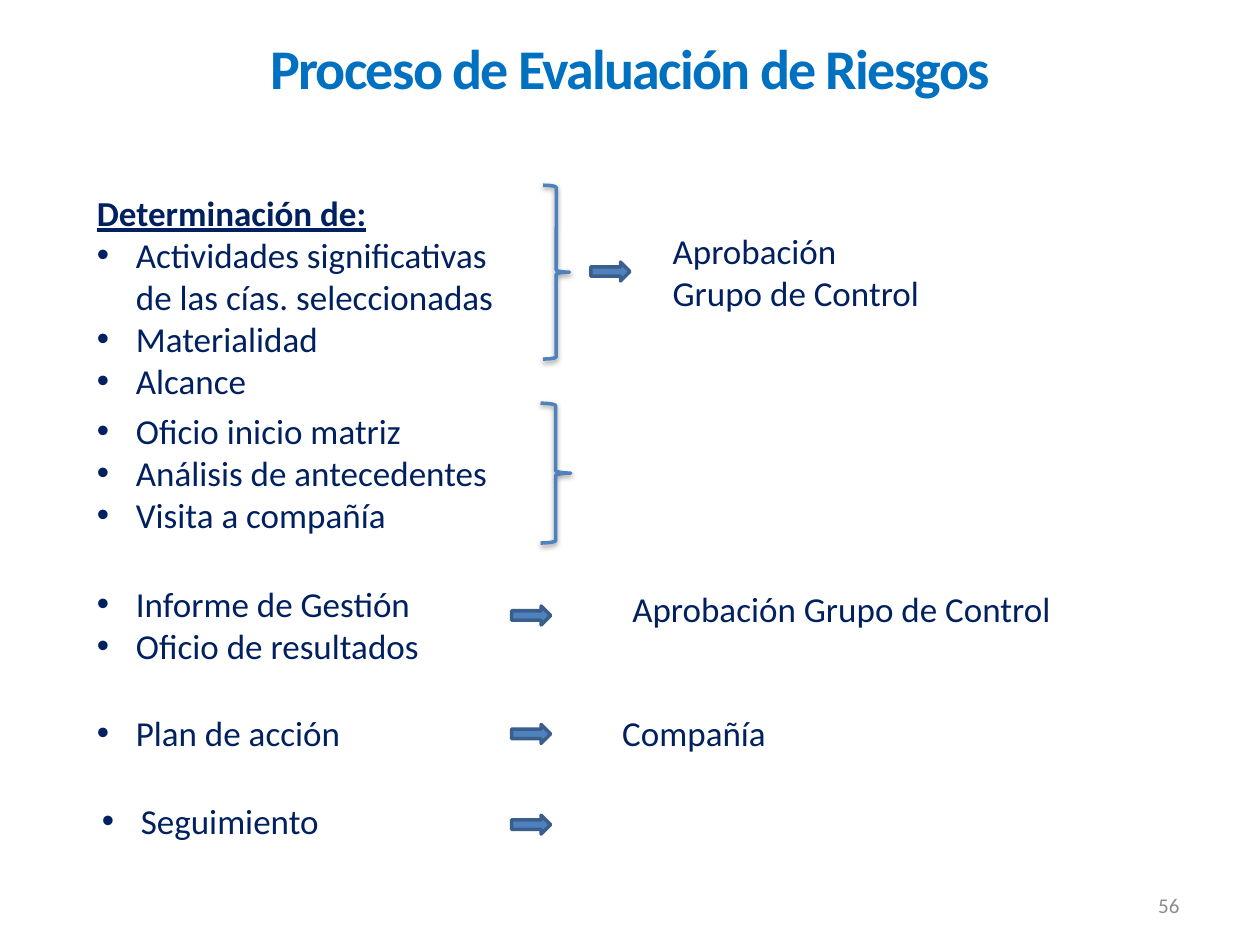
from dataclasses import dataclass

from lxml import etree
from pptx import Presentation
from pptx.dml.color import RGBColor
from pptx.enum.shapes import MSO_SHAPE
from pptx.enum.text import MSO_ANCHOR, MSO_AUTO_SIZE, PP_ALIGN
from pptx.oxml.ns import qn
from pptx.util import Inches, Pt

BRACE, ARROW = MSO_SHAPE.RIGHT_BRACE, MSO_SHAPE.RIGHT_ARROW
LEFT, CENTER, RIGHT = PP_ALIGN.LEFT, PP_ALIGN.CENTER, PP_ALIGN.RIGHT
TOP, MIDDLE = MSO_ANCHOR.TOP, MSO_ANCHOR.MIDDLE
FIT_SHAPE, FIXED = MSO_AUTO_SIZE.SHAPE_TO_FIT_TEXT, MSO_AUTO_SIZE.NONE


@dataclass(frozen=True)
class Theme:
    font: str = "Calibri"
    title_size: int = 32
    body_size: int = 20
    number_size: int = 12
    title: str = "0070C0"
    body: str = "002060"
    number: str = "8C8C8C"
    accent: str = "4F81BD"
    arrow_line: str = "3A5F8C"
    shadow: str = "000000"
    line_width: int = 2
    bullet_indent: float = 0.31


class SlideBuilder:
    def __init__(self, slide, theme):
        self.slide = slide
        self.theme = theme

    def add_run(self, paragraph, text, size, color, bold=False, underline=False):
        run = paragraph.add_run()
        run.text = text
        font = run.font
        font.name, font.size = self.theme.font, Pt(size)
        font.bold, font.underline = bold, underline
        font.color.rgb = RGBColor.from_string(color)
        return run

    def add_title(self, text, box):
        title = self.slide.shapes.title
        title.left, title.top, title.width, title.height = map(Inches, box)
        frame = title.text_frame
        frame.vertical_anchor, frame.auto_size = MIDDLE, FIXED
        paragraph = frame.paragraphs[0]
        paragraph.alignment = CENTER
        run = self.add_run(paragraph, text, self.theme.title_size, self.theme.title, bold=True)
        run.font._element.set("spc", "-100")

    def add_frame(self, box, anchor=TOP, auto_size=FIT_SHAPE):
        frame = self.slide.shapes.add_textbox(*map(Inches, box)).text_frame
        frame.word_wrap = True
        frame.vertical_anchor, frame.auto_size = anchor, auto_size
        return frame

    def add_label(self, text, box):
        paragraph = self.add_frame(box).paragraphs[0]
        self.add_run(paragraph, text, self.theme.body_size, self.theme.body)

    def add_bullets(self, items, box, heading=None):
        frame = self.add_frame(box)
        lines = ([heading] if heading else []) + items
        for index, text in enumerate(lines):
            paragraph = frame.add_paragraph() if index else frame.paragraphs[0]
            is_heading = bool(heading) and index == 0
            if not is_heading:
                self.set_bullet(paragraph)
            self.add_run(paragraph, text, self.theme.body_size, self.theme.body,
                         bold=is_heading, underline=is_heading)

    def set_bullet(self, paragraph):
        properties = paragraph._p.get_or_add_pPr()
        indent = Inches(self.theme.bullet_indent)
        properties.set("marL", str(indent))
        properties.set("indent", str(-indent))
        etree.SubElement(properties, qn("a:buFont"), typeface="Arial")
        etree.SubElement(properties, qn("a:buChar"), char="•")

    def add_outlined(self, kind, box, line_color):
        shape = self.slide.shapes.add_shape(kind, *map(Inches, box))
        shape.shadow.inherit = False
        shape.line.color.rgb = RGBColor.from_string(line_color)
        shape.line.width = Pt(self.theme.line_width)
        return shape

    def add_brace(self, box):
        brace = self.add_outlined(BRACE, box, self.theme.accent)
        brace.fill.background()
        effects = brace._element.spPr.find(qn("a:effectLst"))
        shadow = etree.SubElement(effects, qn("a:outerShdw"), blurRad=str(Pt(3.1)),
                                  dist=str(Pt(1.6)), dir="5400000", rotWithShape="0")
        color = etree.SubElement(shadow, qn("a:srgbClr"), val=self.theme.shadow)
        etree.SubElement(color, qn("a:alpha"), val="38000")

    def add_arrow(self, left, top):
        arrow = self.add_outlined(ARROW, (left, top, 0.31, 0.15), self.theme.arrow_line)
        arrow.fill.solid()
        arrow.fill.fore_color.rgb = RGBColor.from_string(self.theme.accent)

    def add_slide_number(self, text, box):
        paragraph = self.add_frame(box, MIDDLE, FIXED).paragraphs[0]
        paragraph.alignment = RIGHT
        self.add_run(paragraph, text, self.theme.number_size, self.theme.number)


def main():
    presentation = Presentation()
    presentation.slide_width, presentation.slide_height = Inches(10), Inches(7.5)
    title_only = presentation.slide_layouts[5]
    builder = SlideBuilder(presentation.slides.add_slide(title_only), Theme())

    builder.add_title("Proceso de Evaluación de Riesgos", (0.5, 0.3, 9, 0.46))
    builder.add_slide_number("56", (7.13, 6.98, 2.33, 0.4))

    step_left, step_width, arrow_left = 0.67, 3.39, 4.06
    approval = "Aprobación Grupo de Control"

    builder.add_bullets(
        ["Actividades significativas de las cías. seleccionadas", "Materialidad", "Alcance"],
        (step_left, 1.47, step_width, 1.78), heading="Determinación de:")
    builder.add_brace((4.31, 1.47, 0.21, 1.38))
    builder.add_arrow(4.69, 2.08)
    builder.add_label(approval, (5.24, 1.77, 2.2, 0.77))

    builder.add_bullets(
        ["Oficio inicio matriz", "Análisis de antecedentes", "Visita a compañía"],
        (step_left, 3.2, step_width, 1.11))
    builder.add_brace((4.29, 3.2, 0.24, 1.11))

    builder.add_bullets(["Informe de Gestión", "Oficio de resultados"],
                        (step_left, 4.57, step_width, 0.77))
    builder.add_arrow(arrow_left, 4.81)
    builder.add_label(approval, (4.92, 4.61, 3.77, 0.44))

    builder.add_bullets(["Plan de acción"], (step_left, 5.6, 2.83, 0.44))
    builder.add_arrow(arrow_left, 5.75)
    builder.add_label("Compañía", (4.84, 5.6, 1.73, 0.44))

    builder.add_bullets(["Seguimiento"], (0.71, 6.3, 2.83, 0.44))
    builder.add_arrow(arrow_left, 6.47)

    presentation.save("out.pptx")


if __name__ == "__main__":
    main()
